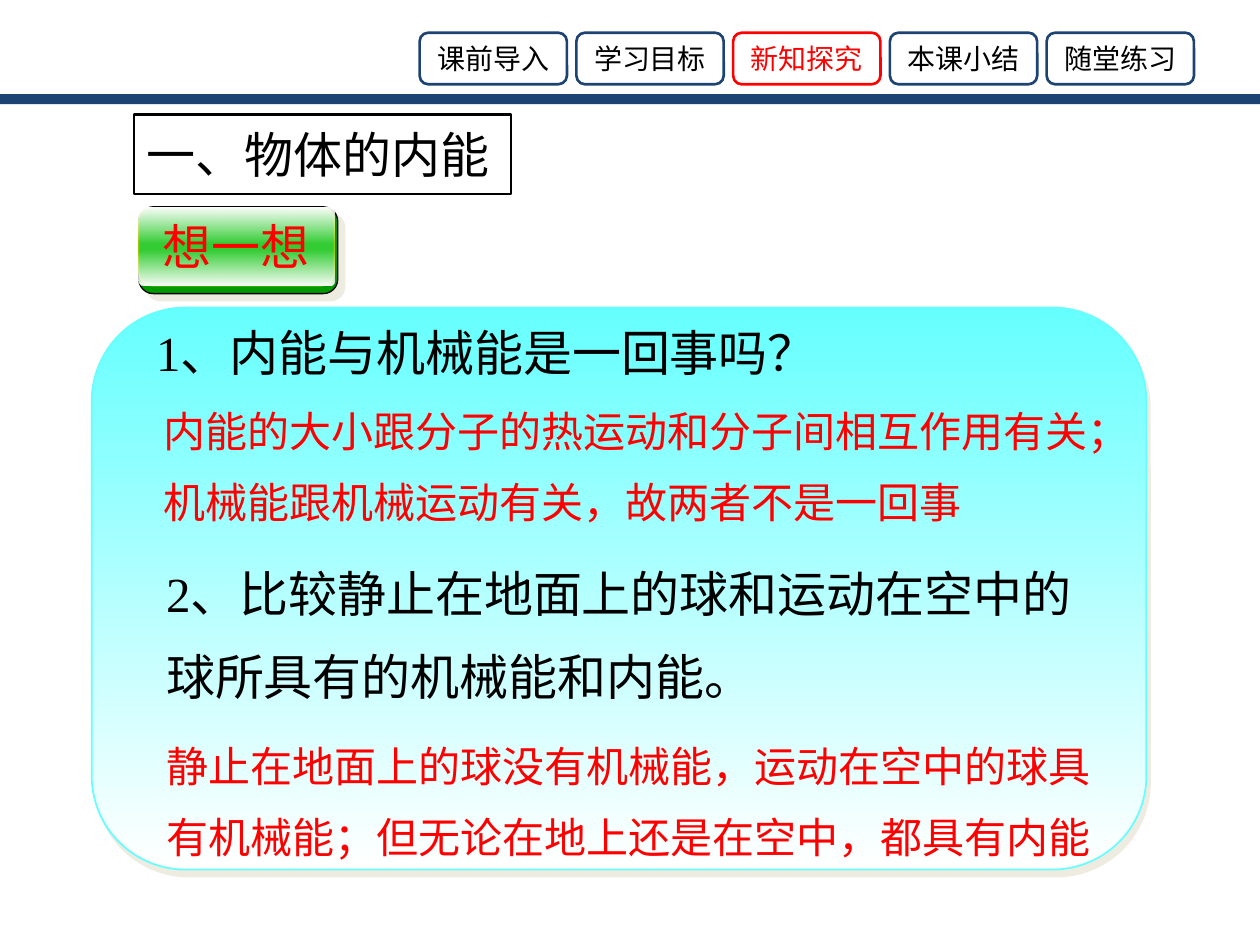
import pptx
import pptx.dml.color
import pptx.enum.lang
import pptx.enum.shapes
import pptx.enum.text
import pptx.oxml
import pptx.oxml.ns
import pptx.util
from lxml import etree

Cm, Pt = pptx.util.Cm, pptx.util.Pt
RGB = pptx.dml.color.RGBColor
SHAPE = pptx.enum.shapes.MSO_SHAPE
ALIGN, ANCHOR = pptx.enum.text.PP_ALIGN, pptx.enum.text.MSO_ANCHOR
NS = pptx.oxml.ns.nsdecls("a")
qn = pptx.oxml.ns.qn

NAVY, RED = RGB(0x1C, 0x43, 0x72), RGB(0xFF, 0, 0)
BLACK, WHITE = RGB(0, 0, 0), RGB(0xFF, 0xFF, 0xFF)
DARK_GREEN, GREEN, LIME = RGB(0, 0x99, 0), RGB(0x33, 0xCC, 0x33), RGB(0x99, 0xCC, 0)
CYAN, SHADOW = RGB(0x66, 0xFF, 0xFF), RGB(0xEE, 0xEC, 0xE1)
SANS, SERIF = "Noto Sans CJK SC", "Times New Roman"

TABS = ["课前导入", "学习目标", "新知探究", "本课小结", "随堂练习"]
ACTIVE_TAB = "新知探究"
TITLE = "一、物体的内能"
BADGE = "想一想"
# text, box in cm, size, colour, line spacing
PASSAGES = [
    ("1、内能与机械能是一回事吗？", (2.9, 6.38, 14.4, 1.45), 28, BLACK, 1),
    ("内能的大小跟分子的热运动和分子间相互作用有关；机械能跟机械运动有关，故两者不是一回事",
     (3.05, 7.65, 19.35, 3.12), 24, RED, 1.4),
    ("2、比较静止在地面上的球和运动在空中的球所具有的机械能和内能。",
     (3.1, 10.77, 19.3, 3.4), 28, BLACK, 1.4),
    ("静止在地面上的球没有机械能，运动在空中的球具有机械能；但无论在地上还是在空中，都具有内能",
     (3.1, 14.4, 19.6, 3.12), 24, RED, 1.4),
]


def write(shape, text, size, color, font=SERIF, align=ALIGN.LEFT,
          anchor=ANCHOR.TOP, spacing=1, wrap=True):
    tf = shape.text_frame
    tf.word_wrap, tf.vertical_anchor = wrap, anchor
    tf.auto_size = pptx.enum.text.MSO_AUTO_SIZE.NONE
    p = tf.paragraphs[0]
    p.text, p.alignment, p.line_spacing = text, align, spacing
    p.space_before = Pt(0)
    f = p.font
    f.size, f.name, f.color.rgb = Pt(size), font, color
    f.language_id = pptx.enum.lang.MSO_LANGUAGE_ID.SIMPLIFIED_CHINESE
    latin = p._p.pPr.find(qn("a:defRPr")).find(qn("a:latin"))
    latin.addnext(pptx.oxml.parse_xml(f'<a:ea {NS} typeface="{SANS}"/>'))


def add_box(shapes, box, fill=None, line=None, width=1, kind=SHAPE.ROUNDED_RECTANGLE):
    sp = shapes.add_shape(kind, *map(Cm, box))
    sp.shadow.inherit = False
    if fill is None:
        sp.fill.background()
    else:
        sp.fill.solid()
        sp.fill.fore_color.rgb = fill
    if line is None:
        sp.line.fill.background()
    else:
        sp.line.color.rgb, sp.line.width = line, Pt(width)
    return sp


def fade(sp, top, bottom, clear=False):
    """Fill from top to bottom colour, the latter transparent if clear."""
    sp.fill.gradient()
    sp.fill.gradient_angle = 270
    for stop, color in zip(sp.fill.gradient_stops, (top, bottom)):
        stop.color.rgb = color
    if clear:
        last = sp._element.spPr.findall(".//" + qn("a:srgbClr"))[1]
        etree.SubElement(last, qn("a:alpha"), val="0")


def cast_shadow(sp, distance, angle):
    effects = sp._element.spPr.find(qn("a:effectLst"))
    effects.append(pptx.oxml.parse_xml(
        f'<a:outerShdw {NS} blurRad="0" dist="{Pt(distance)}" dir="{angle * 60000}" '
        f'algn="ctr" rotWithShape="0"><a:srgbClr val="{SHADOW}"/></a:outerShdw>'))


def add_header(s):
    add_box(s.shapes, (0, 1.9, 25.4, 0.2), NAVY, kind=SHAPE.RECTANGLE)
    left, pitch = 8.46, 3.16
    for i, label in enumerate(TABS):
        active = label == ACTIVE_TAB
        tab = add_box(s.shapes, (left + i * pitch, 0.66, 2.97, 1.04),
                      line=RED if active else NAVY, width=1.5)
        write(tab, label, 16, RED if active else BLACK, SANS,
              ALIGN.CENTER, ANCHOR.MIDDLE, wrap=False)


def add_title(s):
    title = s.shapes.title
    title.left, title.top, title.width, title.height = map(Cm, (2.7, 2.31, 7.6, 1.6))
    title._element.spPr.append(pptx.oxml.parse_xml(
        f'<a:prstGeom {NS} prst="roundRect"><a:avLst/></a:prstGeom>'))
    title.line.color.rgb, title.line.width = BLACK, Pt(1.5)
    write(title, TITLE, 28, BLACK, anchor=ANCHOR.MIDDLE)


def add_badge(s):
    group = s.shapes.add_group_shape().shapes
    base = add_box(group, (2.8, 4.17, 4.01, 1.75), DARK_GREEN, BLACK, 0.75)
    cast_shadow(base, 5.7, 45)
    add_box(group, (2.8, 4.19, 3.94, 1.57), GREEN, LIME, 0.75)
    for top, turn in ((5.06, 180), (4.19, 0)):
        gloss = add_box(group, (2.8, top, 3.94, 0.69))
        gloss.rotation = turn
        fade(gloss, WHITE, WHITE, clear=True)
    label = group.add_textbox(*map(Cm, (2.5, 4.32, 4.52, 1.27)))
    write(label, BADGE, 28, RED, align=ALIGN.CENTER, anchor=ANCHOR.MIDDLE)


def add_panel(s):
    panel = add_box(s.shapes, (1.85, 6.2, 21.26, 11.33), line=CYAN)
    fade(panel, CYAN, WHITE)
    cast_shadow(panel, 4.5, 63)
    for text, box, size, color, spacing in PASSAGES:
        tb = s.shapes.add_textbox(*map(Cm, box))
        write(tb, text, size, color, spacing=spacing)


def main():
    prs = pptx.Presentation()
    prs.slide_width, prs.slide_height = Cm(25.4), Cm(19.05)
    s = prs.slides.add_slide(prs.slide_layouts[5])
    add_header(s)
    add_title(s)
    add_badge(s)
    add_panel(s)
    prs.save("out.pptx")


if __name__ == "__main__":
    main()
